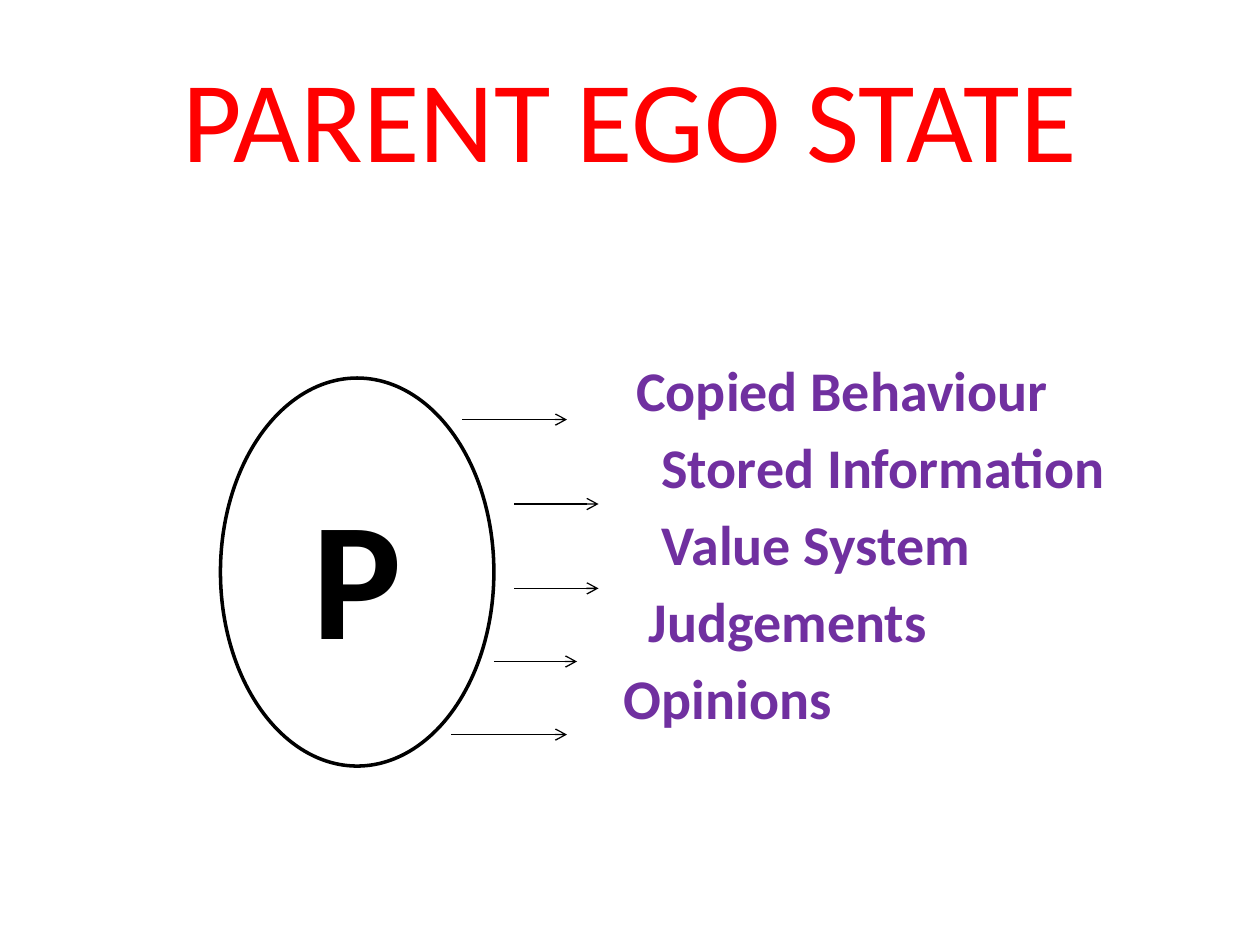
from lxml import etree
from pptx import Presentation
from pptx.dml.color import RGBColor
from pptx.enum import shapes, text
from pptx.oxml import ns
from pptx.util import Inches, Pt

HUES = {"title": "FF0000", "item": "7030A0", "ink": "000000", "fill": "FFFFFF"}
ITEMS = [
    ("Copied Behaviour", 1),
    ("Stored Information", 3),
    ("Value System", 3),
    ("Judgements", 2),
    ("Opinions", 0),
]
ARROWS = [
    (3.67, 4.5, 3.33),
    (4.08, 4.75, 4),
    (4.08, 4.75, 4.67),
    (3.92, 4.58, 5.25),
    (3.58, 4.5, 5.83),
]


def hue(name):
    """Return the named colour."""
    return RGBColor.from_string(HUES[name])


def style(par, size, color, bold=False):
    """Apply the font format to a paragraph's runs."""
    form = {"name": "Calibri", "size": Pt(size), "bold": bold}
    for run in par.runs:
        for key, val in form.items():
            setattr(run.font, key, val)
        run.font.color.rgb = hue(color)


def center(frame, words, size, color, bold=False):
    """Put one centred line into a text frame."""
    frame.word_wrap = True
    frame.vertical_anchor = text.MSO_ANCHOR.MIDDLE
    par = frame.paragraphs[0]
    par.text = words
    par.alignment = text.PP_ALIGN.CENTER
    style(par, size, color, bold)


def title(slide, box):
    """Place the slide title in its box."""
    shape = slide.shapes.add_textbox(*map(Inches, box))
    center(shape.text_frame, "PARENT EGO STATE", 66, "title")


def oval(slide, box):
    """Place the lettered ego state oval in its box."""
    shape = slide.shapes.add_shape(shapes.MSO_SHAPE.OVAL, *map(Inches, box))
    shape.shadow.inherit = False
    shape.fill.solid()
    shape.fill.fore_color.rgb = hue("fill")
    shape.line.color.rgb = hue("ink")
    shape.line.width = Pt(2)
    center(shape.text_frame, "P", 96, "ink", True)


def traits(slide, box, step=0.1):
    """List the traits in a box, each indented by its own steps."""
    frame = slide.shapes.add_textbox(*map(Inches, box)).text_frame
    frame.word_wrap = True
    for side in ("left", "right", "top", "bottom"):
        setattr(frame, f"margin_{side}", 0)
    for num, (words, steps) in enumerate(ITEMS):
        par = frame.add_paragraph() if num else frame.paragraphs[0]
        par.text = words
        par.space_after = Pt(5.6)
        par._p.get_or_add_pPr().set("marL", str(Inches(steps * step)))
        style(par, 32, "item", True)


def arrow(slide, left, right, top):
    """Draw a level arrow from left to right."""
    ends = map(Inches, (left, top, right, top))
    line = slide.shapes.add_connector(shapes.MSO_CONNECTOR.STRAIGHT, *ends)
    line.line.color.rgb = hue("ink")
    line.line.width = Pt(0.75)
    etree.SubElement(line.line._get_or_add_ln(), ns.qn("a:tailEnd"), type="arrow")
    etree.SubElement(line._element.spPr, ns.qn("a:effectLst"))


def main():
    """Build and save the slide."""
    deck = Presentation()
    deck.slide_width, deck.slide_height = Inches(10), Inches(7.5)
    slide = deck.slides.add_slide(deck.slide_layouts[6])
    title(slide, (0.5, 0.3, 9, 1.25))
    traits(slide, (4.95, 2.82, 4.3, 3.1))
    oval(slide, (1.75, 3, 2.17, 3.08))
    for ends in ARROWS:
        arrow(slide, *ends)
    deck.save("out.pptx")


if __name__ == "__main__":
    main()
